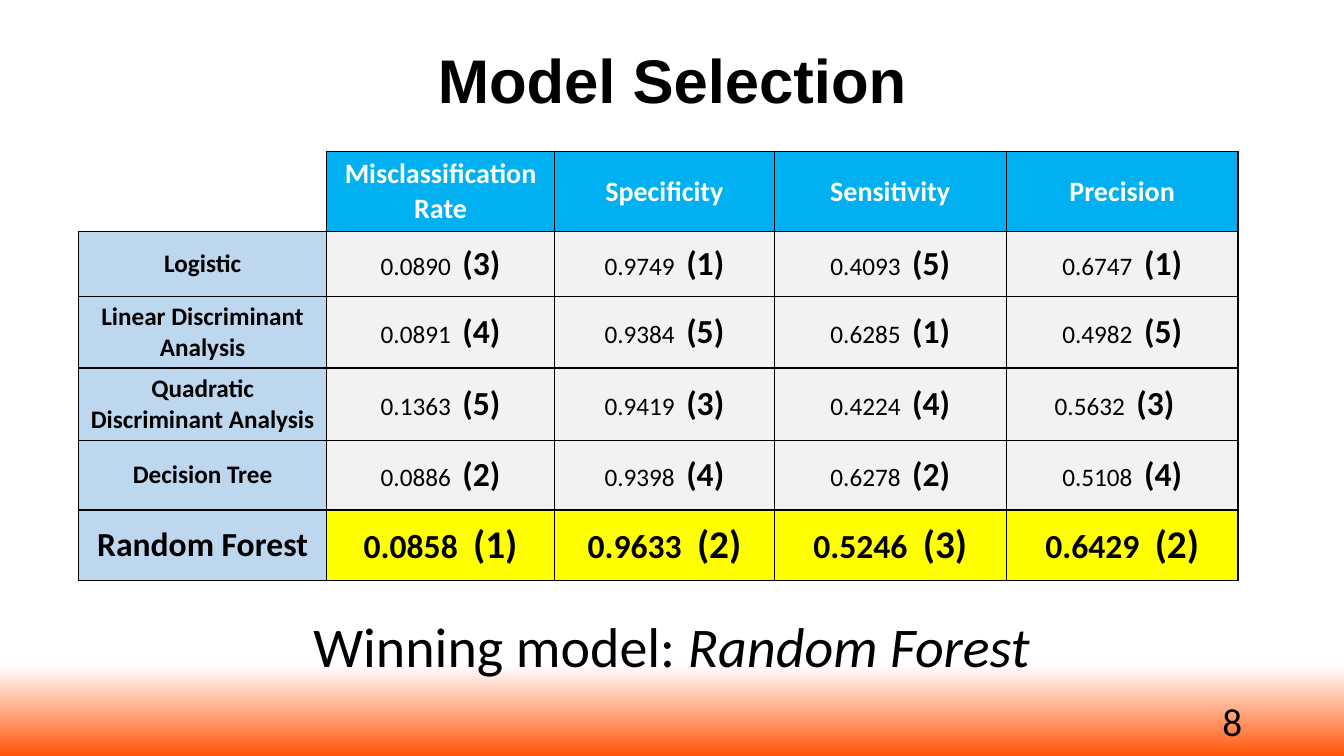
"""Build the model selection slide with its ranked comparison table."""
from dataclasses import dataclass

from lxml import etree
from pptx import Presentation
from pptx.dml.color import RGBColor
from pptx.enum.text import MSO_ANCHOR, PP_ALIGN
from pptx.oxml.ns import qn
from pptx.util import Inches, Pt

CENTER, RIGHT = PP_ALIGN.CENTER, PP_ALIGN.RIGHT
MIDDLE, TOP = MSO_ANCHOR.MIDDLE, MSO_ANCHOR.TOP

COLORS = {
    "black": "000000",
    "white": "FFFFFF",
    "orange": "FF550A",
    "header": "00B0F0",
    "label": "BDD7EE",
    "value": "F2F2F2",
    "winner": "FFFF00",
}
METRICS = ["Misclassification Rate", "Specificity", "Sensitivity", "Precision"]
COL_WIDTHS = [2.46, 2.26, 2.18, 2.3, 2.3]
HEADER_HEIGHT = 0.8


@dataclass
class Model:
    name: str
    height: float
    scores: list[str]
    ranks: list[int]
    winner: bool = False


@dataclass
class Span:
    text: str
    size: float
    bold: bool = False
    italic: bool = False
    color: str = "black"
    font: str = "Calibri"
    spacing: float = 0


MODELS = [
    Model("Logistic", 0.64, ["0.0890", "0.9749", "0.4093", "0.6747"], [3, 1, 5, 1]),
    Model("Linear Discriminant\nAnalysis", 0.7,
          ["0.0891", "0.9384", "0.6285", "0.4982"], [4, 5, 1, 5]),
    Model("Quadratic Discriminant Analysis", 0.72,
          ["0.1363", "0.9419", "0.4224", "0.5632"], [5, 3, 4, 3]),
    Model("Decision Tree", 0.69, ["0.0886", "0.9398", "0.6278", "0.5108"], [2, 4, 2, 4]),
    Model("Random Forest", 0.7,
          ["0.0858", "0.9633", "0.5246", "0.6429"], [1, 2, 3, 2], winner=True),
]


def rgb(name: str) -> RGBColor:
    return RGBColor.from_string(COLORS[name])


def format_run(r, span: Span) -> None:
    r.font.name = span.font
    r.font.size = Pt(span.size)
    r.font.bold = span.bold
    r.font.italic = span.italic
    r.font.color.rgb = rgb(span.color)
    if span.spacing:
        r.font._element.set("spc", str(round(span.spacing * 100)))


def write_text(tf, span: Span, align=CENTER) -> None:
    tf.text = span.text
    for p in tf.paragraphs:
        p.alignment = align
        for r in p.runs:
            format_run(r, span)


def write_spans(tf, spans: list[Span]) -> None:
    p = tf.paragraphs[0]
    p.alignment = CENTER
    for span in spans:
        r = p.add_run()
        r.text = span.text
        format_run(r, span)


def make_line(tag: str, color: str, width: float):
    ln = etree.Element(qn(tag), w=str(Pt(width)))
    fill = etree.SubElement(ln, qn("a:solidFill"))
    etree.SubElement(fill, qn("a:srgbClr"), val=COLORS[color])
    return ln


def style_cell(cell, fill: str, outer: str = "black") -> None:
    cell.fill.solid()
    cell.fill.fore_color.rgb = rgb(fill)
    cell.vertical_anchor = MIDDLE
    sides = {"a:lnL": outer, "a:lnR": "black", "a:lnT": outer, "a:lnB": "black"}
    tc_pr = cell._tc.get_or_add_tcPr()
    for i, (tag, color) in enumerate(sides.items()):
        tc_pr.insert(i, make_line(tag, color, 1))


def add_text_box(s, left: float, top: float, width: float, height: float, anchor):
    sp = s.shapes.add_textbox(Inches(left), Inches(top), Inches(width), Inches(height))
    tf = sp.text_frame
    tf.word_wrap = True
    tf.vertical_anchor = anchor
    return tf


def paint_background(s) -> None:
    fill = s.background.fill
    fill.gradient()
    fill.gradient_angle = 90
    for stop, color, position in zip(fill.gradient_stops, ["orange", "white"], [0, 0.12]):
        stop.color.rgb = rgb(color)
        stop.position = position


def add_title(s) -> None:
    sp = s.shapes.title
    sp.left, sp.top = Inches(0.92), Inches(0.1)
    sp.width, sp.height = Inches(11.5), Inches(1.45)
    tf = sp.text_frame
    tf.vertical_anchor = MIDDLE
    write_text(tf, Span("Model Selection", 44, bold=True, font="Arial"))
    p = tf.paragraphs[0]
    p.line_spacing = 0.9
    p.runs[0].font._element.insert(0, make_line("a:ln", "white", 0.75))


def add_model_row(table, row: int, model: Model) -> None:
    table.rows[row].height = Inches(model.height)
    label = table.cell(row, 0)
    style_cell(label, "label")
    score_size, rank_size = (24, 28) if model.winner else (18, 24)
    write_text(label.text_frame, Span(model.name, score_size, bold=True))
    for col, (score, rank) in enumerate(zip(model.scores, model.ranks), start=1):
        cell = table.cell(row, col)
        style_cell(cell, "winner" if model.winner else "value")
        write_spans(cell.text_frame, [
            Span(score, score_size, bold=model.winner),
            Span(" ", score_size, bold=model.winner, spacing=score_size * 0.23),
            Span(f"({rank})", rank_size, bold=True),
        ])


def add_score_table(s) -> None:
    height = HEADER_HEIGHT + sum(model.height for model in MODELS)
    table = s.shapes.add_table(
        len(MODELS) + 1, len(COL_WIDTHS), Inches(0.78), Inches(1.5),
        Inches(sum(COL_WIDTHS)), Inches(height)).table
    table.first_row = False
    table.horz_banding = False
    for column, width in zip(table.columns, COL_WIDTHS):
        column.width = Inches(width)
    table.rows[0].height = Inches(HEADER_HEIGHT)
    style_cell(table.cell(0, 0), "white", outer="white")
    for col, metric in enumerate(METRICS, start=1):
        cell = table.cell(0, col)
        style_cell(cell, "header")
        write_text(cell.text_frame, Span(metric, 20, bold=True, color="white"))
    for row, model in enumerate(MODELS, start=1):
        add_model_row(table, row, model)
    table.cell(3, 4).margin_right = Inches(0.25)


def main() -> None:
    prs = Presentation()
    prs.slide_width, prs.slide_height = Inches(13.33), Inches(7.5)
    s = prs.slides.add_slide(prs.slide_layouts[5])
    paint_background(s)
    add_title(s)
    add_score_table(s)
    verdict = add_text_box(s, 0.98, 6.02, 11.36, 0.77, TOP)
    write_spans(verdict, [Span("Winning model: ", 40), Span("Random Forest", 40, italic=True)])
    number = add_text_box(s, 9.42, 6.95, 3, 0.4, MIDDLE)
    write_text(number, Span("8", 28), RIGHT)
    prs.save("out.pptx")


if __name__ == "__main__":
    main()
